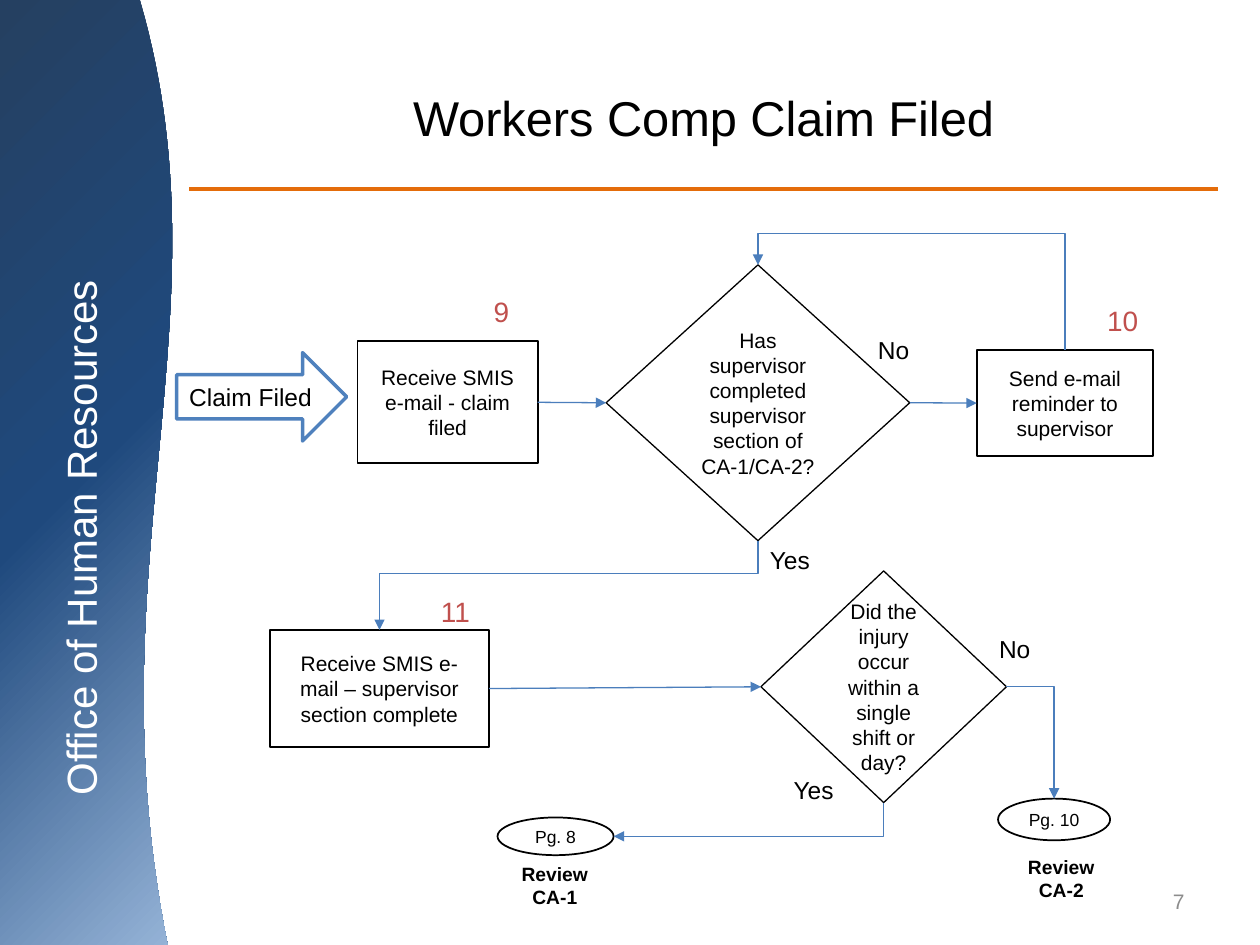
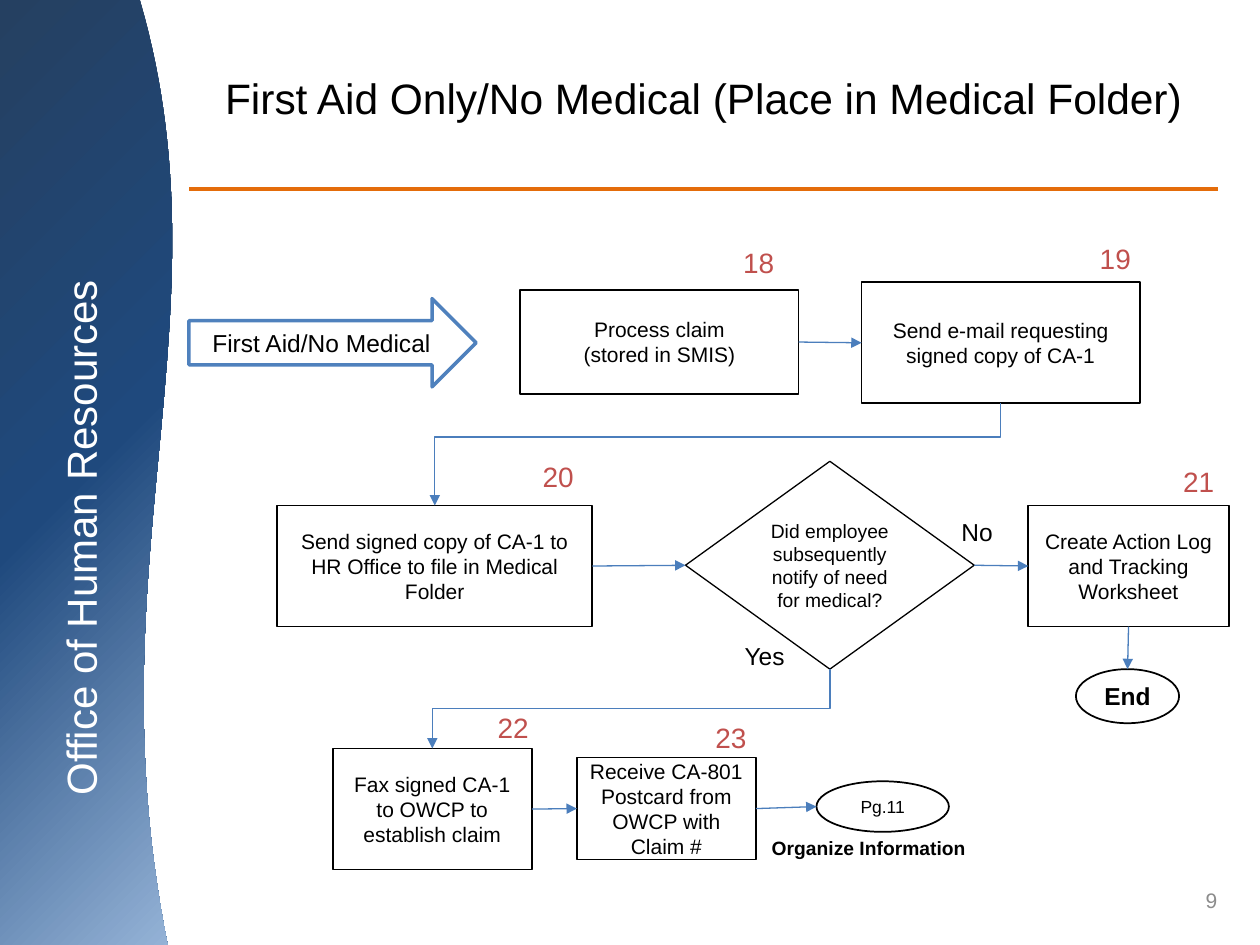
import copy

import pptx
import pptx.dml.color
import pptx.enum.dml
import pptx.enum.shapes
import pptx.enum.text
import pptx.oxml
import pptx.oxml.ns
import pptx.util

Cm = pptx.util.Cm
Pt = pptx.util.Pt
PRESET = pptx.enum.shapes.MSO_SHAPE
ALIGN = pptx.enum.text.PP_ALIGN
ANCHOR = pptx.enum.text.MSO_ANCHOR

COLORS = {
    "ink": "000000", "paper": "FFFFFF", "step": "C0504D", "number": "8C8C8C",
    "link": "4B7EBC", "arrow": "4F81BD", "rule": "E46C0A",
    "band_top": "254061", "band_middle": "1F497D", "band_bottom": "95B3D7",
}
FONT = "Arial"
WIDTH, HEIGHT = 25.4, 19.05
TOP, LEFT, BOTTOM, RIGHT = range(4)

BAND_TEXT = "Office of Human Resources"
BAND_EDGE = [(2.82, 0), (4.67, 6.38), (1.83, 11.33), (3.38, HEIGHT)]
BAND_STEPS = 60
BAND_STOPS = [(0, "band_top"), (0.5, "band_middle"), (1, "band_bottom")]

KINDS = {
    "process": (PRESET.FLOWCHART_PROCESS, "ink", 1, 12, False),
    "decision": (PRESET.FLOWCHART_DECISION, "ink", 0.75, 12, False),
    "small decision": (PRESET.FLOWCHART_DECISION, "ink", 0.75, 11, False),
    "page": (PRESET.FLOWCHART_CONNECTOR, "ink", 1, 10, False),
    "end": (PRESET.FLOWCHART_CONNECTOR, "ink", 1, 14, True),
    "entry": (PRESET.RIGHT_ARROW, "arrow", 2, 14, False),
}
ROUND_KINDS = ("page", "end")

LABELS = {
    "step": (16, "step", False, ALIGN.LEFT, 0.94),
    "answer": (14, "ink", False, ALIGN.LEFT, 0.86),
    "note": (11, "ink", True, ALIGN.CENTER, 0.74),
}

PAGES = [
    {
        "title": ("Workers Comp Claim Filed", 27.9, 3.18),
        "number": ("7", 18.21, 17.65),
        "nodes": {
            "filed": ("entry", ["Claim Filed"], 3.56, 7.11, 3.43, 1.78),
            "receive": ("process", ["Receive SMIS e-mail - claim filed"], 7.21, 6.88, 3.63, 2.46),
            "section": ("decision", ["Has supervisor completed supervisor section of CA-1/CA-2?"],
                        12.22, 5.34, 6.12, 5.56),
            "remind": ("process", ["Send e-mail reminder to supervisor"], 19.69, 7.06, 3.56, 2.13),
            "complete": ("process", ["Receive SMIS e-mail – supervisor section complete"],
                         5.44, 12.7, 4.42, 2.36),
            "shift": ("decision", ["Did the injury occur within a single shift or day?"],
                      15.34, 11.51, 4.95, 4.67),
            "page 10": ("page", ["Pg. 10"], 20.12, 16.1, 2.26, 0.84),
            "page 8": ("page", ["Pg. 8"], 10.03, 16.48, 2.34, 0.76),
        },
        "straight": [
            ("receive", RIGHT, "section", LEFT),
            ("section", RIGHT, "remind", LEFT),
            ("complete", RIGHT, "shift", LEFT),
        ],
        "bent": [
            ("remind", TOP, "section", TOP, 1.37),
            ("section", BOTTOM, "complete", TOP, 0.37),
            ("shift", RIGHT, "page 10", TOP, None),
            ("shift", BOTTOM, "page 8", RIGHT, None),
        ],
        "labels": [
            ("step", ["9"], 9.7, 5.82, 0.84),
            ("step", ["10"], 22.07, 5.99, 1.14),
            ("step", ["11"], 8.64, 11.86, 1.09),
            ("answer", ["No"], 17.45, 6.63, 1.14),
            ("answer", ["Yes"], 15.27, 10.87, 1.32),
            ("answer", ["No"], 19.89, 12.65, 1.14),
            ("answer", ["Yes"], 15.75, 15.49, 1.32),
            ("note", ["Review", "CA-1"], 10.26, 17.25, 1.85),
            ("note", ["Review", "CA-2"], 20.47, 17.12, 1.85),
        ],
    },
    {
        "title": ("First Aid Only/No Medical (Place in Medical Folder)", 24.3, 2.41),
        "number": ("9", 18.87, 17.63),
        "nodes": {
            "first aid": ("entry", ["First Aid/No Medical"], 3.81, 6.02, 5.79, 1.78),
            "claim": ("process", ["Process claim", "(stored in SMIS)"], 10.49, 5.84, 5.61, 2.11),
            "request": ("process", ["Send e-mail requesting signed copy of CA-1"],
                        17.37, 5.69, 5.61, 2.44),
            "file": ("process", ["Send signed copy of CA-1 to HR Office to file in Medical Folder"],
                     5.59, 10.19, 6.35, 2.44),
            "need": ("small decision", ["Did employee subsequently notify of need for medical?"],
                     13.82, 9.3, 5.82, 4.19),
            "log": ("process", ["Create Action Log and Tracking Worksheet"],
                    20.73, 10.19, 4.04, 2.44),
            "end": ("end", ["End"], 21.69, 13.49, 2.08, 1.09),
            "fax": ("process", ["Fax signed CA-1 to OWCP to establish claim"],
                    6.71, 15.09, 4.01, 2.44),
            "postcard": ("process", ["Receive CA-801 Postcard from OWCP with Claim #"],
                         11.63, 15.27, 3.61, 2.06),
            "page 11": ("page", ["Pg.11"], 16.46, 15.75, 2.67, 1.02),
        },
        "straight": [
            ("claim", RIGHT, "request", LEFT),
            ("file", RIGHT, "need", LEFT),
            ("need", RIGHT, "log", LEFT),
            ("log", BOTTOM, "end", TOP),
            ("fax", RIGHT, "postcard", LEFT),
            ("postcard", RIGHT, "page 11", LEFT),
        ],
        "bent": [
            ("request", BOTTOM, "file", TOP, 0.33),
            ("need", BOTTOM, "fax", TOP, 0.5),
        ],
        "labels": [
            ("step", ["18"], 14.73, 4.83, 1.14),
            ("step", ["19"], 21.92, 4.75, 1.14),
            ("step", ["20"], 10.69, 9.14, 1.14),
            ("step", ["21"], 23.6, 9.25, 1.14),
            ("step", ["22"], 9.78, 14.2, 1.14),
            ("step", ["23"], 14.17, 14.4, 1.14),
            ("answer", ["No"], 19.13, 10.29, 1.14),
            ("answer", ["Yes"], 14.76, 12.8, 1.32),
            ("note", ["Organize Information"], 14.38, 16.74, 6.27),
        ],
    },
]


def color(name):
    return pptx.dml.color.RGBColor.from_string(COLORS[name])


def drawing_element(tag):
    return pptx.oxml.parse_xml(f"<a:{tag} {pptx.oxml.ns.nsdecls('a')}/>")


def write(box, lines, size, ink="ink", bold=False, align=ALIGN.CENTER,
          anchor=ANCHOR.MIDDLE, wrap=True):
    frame = box.text_frame
    frame.word_wrap = wrap
    frame.vertical_anchor = anchor
    for index, line in enumerate(lines):
        para = frame.add_paragraph() if index else frame.paragraphs[0]
        para.alignment = align
        span = para.add_run()
        span.text = line
        span.font.name = FONT
        span.font.size = Pt(size)
        span.font.bold = bold
        span.font.color.rgb = color(ink)


def add_text(page, lines, place, size, **style):
    box = page.shapes.add_textbox(*map(Cm, place))
    write(box, lines, size, **style)
    return box


def add_line(page, kind, start, end, ink, width):
    line = page.shapes.add_connector(kind, *start, *end)
    line.line.color.rgb = color(ink)
    line.line.width = Pt(width)
    line._element.spPr.append(drawing_element("effectLst"))
    return line


def curve_point(step):
    t = step / BAND_STEPS
    weights = ((1 - t) ** 3, 3 * t * (1 - t) ** 2, 3 * t ** 2 * (1 - t), t ** 3)
    return tuple(Cm(sum(w * p[axis] for w, p in zip(weights, BAND_EDGE))) for axis in (0, 1))


def add_band(page):
    edge = [curve_point(step) for step in range(BAND_STEPS + 1)]
    builder = page.shapes.build_freeform(0, 0)
    builder.add_line_segments(edge + [(0, Cm(HEIGHT))], close=True)
    band = builder.convert_to_shape()
    band.shadow.inherit = False
    band.line.fill.background()
    band.fill.gradient()
    band.fill.gradient_angle = 315
    stops = band._element.spPr.find(".//" + pptx.oxml.ns.qn("a:gsLst"))
    stops.insert(1, copy.deepcopy(stops[0]))
    for stop, (position, name) in zip(band.fill.gradient_stops, BAND_STOPS):
        stop.position = position
        stop.color.rgb = color(name)
    add_text(page, [BAND_TEXT], (-5.33, 10.13, 13.89, 1.42), 24, ink="paper").rotation = 270


def add_frame(page, content):
    add_band(page)
    add_line(page, pptx.enum.shapes.MSO_CONNECTOR.STRAIGHT,
             (Cm(3.81), Cm(3.81)), (Cm(24.56), Cm(3.81)), "rule", 2.25)
    title, size, height = content["title"]
    add_text(page, [title], (3.81, 0.76, 20.75, height), size)
    number, left, top = content["number"]
    add_text(page, [number], (left, top, 5.92, 1.02), 12, ink="number", align=ALIGN.RIGHT)


def add_node(page, kind, lines, *place):
    preset, ink, width, size, bold = KINDS[kind]
    node = page.shapes.add_shape(preset, *map(Cm, place))
    node.shadow.inherit = False
    if kind == "entry":
        node.fill.solid()
        node.fill.fore_color.rgb = color("paper")
    else:
        node.fill.background()
    node.line.color.rgb = color(ink)
    node.line.width = Pt(width)
    write(node, lines, size, bold=bold, wrap=kind != "entry")
    return node


def side_point(node, side):
    across, down = {TOP: (1, 0), LEFT: (0, 1), BOTTOM: (1, 2), RIGHT: (2, 1)}[side]
    return node.left + node.width * across // 2, node.top + node.height * down // 2


def add_link(page, kind, source, source_side, target, target_side, target_round):
    link = add_line(page, kind, side_point(source, source_side),
                    side_point(target, target_side), "link", 0.75)
    link.begin_connect(source, source_side)
    link.end_connect(target, target_side)
    if target_round:
        joint = link._element.find(".//" + pptx.oxml.ns.qn("a:endCxn"))
        joint.set("idx", str(target_side * 2))
    head = drawing_element("tailEnd")
    head.set("type", "triangle")
    link.line._get_or_add_ln().append(head)
    return link


def bend(link, start, end, source_side, middle):
    across, down = end[0] - start[0], end[1] - start[1]
    turn = {TOP: 270, BOTTOM: 90, RIGHT: 0}[source_side]
    flip = {270: across < 0, 90: across > 0, 0: down < 0}[turn]
    width, height = (abs(down), abs(across)) if turn else (abs(across), abs(down))
    link.left = (start[0] + end[0] - width) // 2
    link.top = (start[1] + end[1] - height) // 2
    link.width, link.height = width, height
    transform = link._element.spPr.find(pptx.oxml.ns.qn("a:xfrm"))
    for name in ("flipH", "flipV"):
        transform.attrib.pop(name, None)
    transform.set("rot", str(turn * 60000))
    if flip:
        transform.set("flipV", "1")
    geometry = link._element.spPr.find(pptx.oxml.ns.qn("a:prstGeom"))
    if middle is None:
        geometry.set("prst", "bentConnector2")
        return
    guide = drawing_element("gd")
    guide.set("name", "adj1")
    guide.set("fmla", f"val {round(middle * 100000)}")
    geometry.find(pptx.oxml.ns.qn("a:avLst")).append(guide)


def add_flow(page, content):
    nodes = {name: add_node(page, *node) for name, node in content["nodes"].items()}
    kinds = {name: node[0] for name, node in content["nodes"].items()}
    for source, source_side, target, target_side in content["straight"]:
        add_link(page, pptx.enum.shapes.MSO_CONNECTOR.STRAIGHT, nodes[source], source_side,
                 nodes[target], target_side, kinds[target] in ROUND_KINDS)
    for source, source_side, target, target_side, middle in content["bent"]:
        link = add_link(page, pptx.enum.shapes.MSO_CONNECTOR.ELBOW, nodes[source], source_side,
                        nodes[target], target_side, kinds[target] in ROUND_KINDS)
        bend(link, side_point(nodes[source], source_side),
             side_point(nodes[target], target_side), source_side, middle)
    for kind, lines, left, top, width in content["labels"]:
        size, ink, bold, align, height = LABELS[kind]
        add_text(page, lines, (left, top, width, height), size, ink=ink, bold=bold,
                 align=align, anchor=ANCHOR.TOP, wrap=False)


def main():
    deck = pptx.Presentation()
    deck.slide_width, deck.slide_height = Cm(WIDTH), Cm(HEIGHT)
    for content in PAGES:
        page = deck.slides.add_slide(deck.slide_layouts[6])
        add_frame(page, content)
        add_flow(page, content)
    deck.save("out.pptx")


if __name__ == "__main__":
    main()
